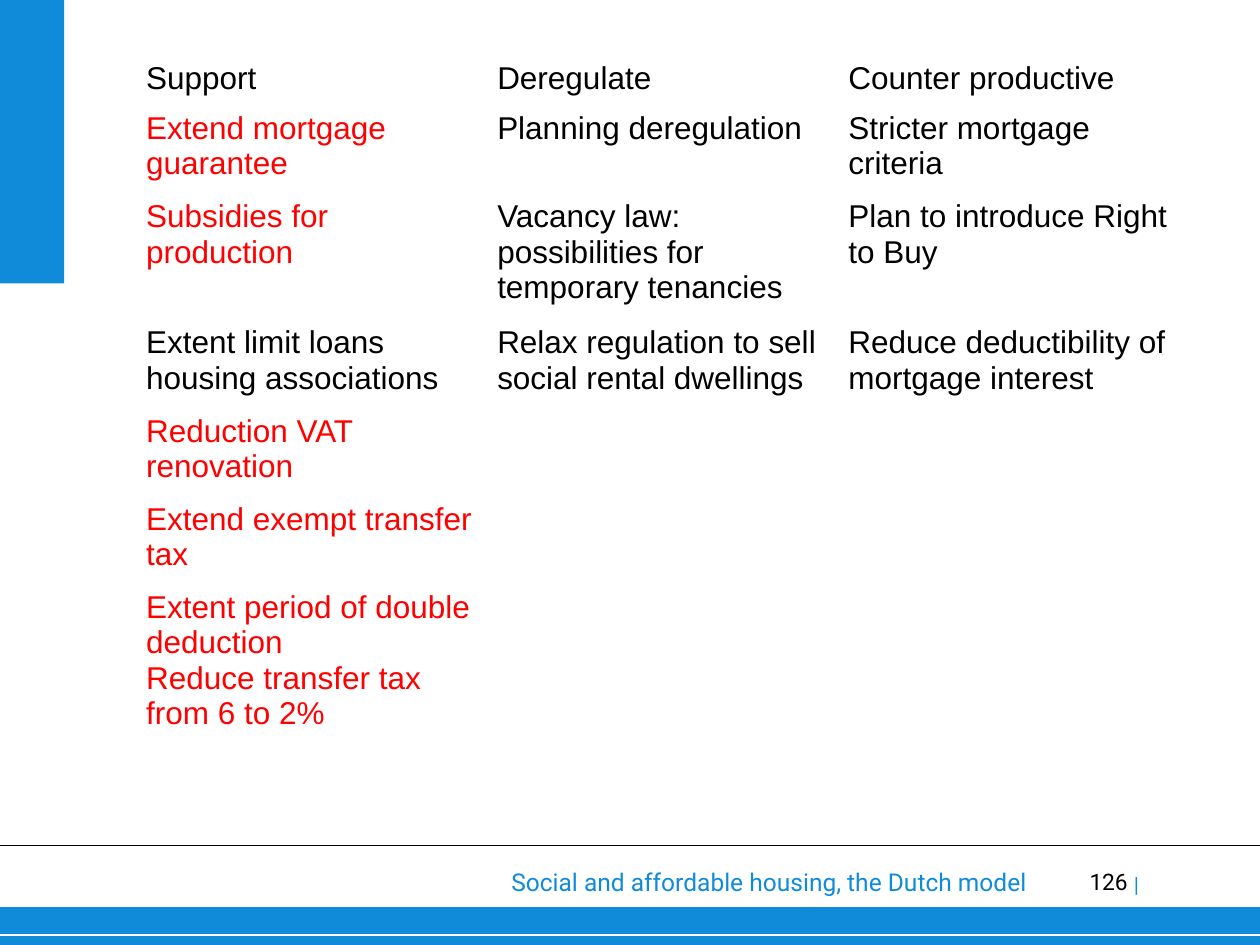
from dataclasses import dataclass

from lxml.etree import SubElement
from pptx import Presentation
from pptx.dml.color import RGBColor
from pptx.enum.shapes import MSO_CONNECTOR, MSO_SHAPE
from pptx.enum.text import PP_ALIGN
from pptx.oxml.ns import qn
from pptx.util import Inches, Pt


@dataclass(frozen=True)
class Theme:
    blue: RGBColor = RGBColor(0x10, 0x8B, 0xD9)
    black: RGBColor = RGBColor(0, 0, 0)
    red: RGBColor = RGBColor(0xFF, 0, 0)
    white: RGBColor = RGBColor(0xFF, 0xFF, 0xFF)
    table_font: str = "Arial"
    footer_font: str = "Roboto"
    table_size: int = 18
    footer_size: int = 14
    number_size: int = 13
    divider_size: int = 12


THEME = Theme()

HEADINGS = ["Support", "Deregulate", "Counter productive"]
# Row height, then the measures in each column
MEASURES = [
    (0.7, ["Extend mortgage guarantee", "Planning deregulation", "Stricter mortgage criteria"]),
    (1.0, ["Subsidies for production",
           "Vacancy law: possibilities for temporary tenancies",
           "Plan to introduce Right to Buy"]),
    (0.7, ["Extent limit loans housing associations",
           "Relax regulation to sell social rental dwellings",
           "Reduce deductibility of mortgage interest"]),
    (0.7, ["Reduction VAT renovation", "", ""]),
    (0.7, ["Extend exempt transfer tax", "", ""]),
    (1.6, ["Extent period of double deduction\nReduce transfer tax from 6 to 2%", "", ""]),
]
# Support measures that stay black
UNMARKED = {"Extent limit loans housing associations"}


def add_run(paragraph, text, font, size, color):
    run = paragraph.add_run()
    run.text = text
    run.font.name = font
    run.font.size = Pt(size)
    run.font.bold = False
    run.font.color.rgb = color


def add_band(slide, left, top, width, height):
    band = slide.shapes.add_shape(
        MSO_SHAPE.RECTANGLE, Inches(left), Inches(top), Inches(width), Inches(height))
    band.shadow.inherit = False
    band.fill.solid()
    band.fill.fore_color.rgb = THEME.blue
    band.line.fill.background()


def add_rule(slide, left, y, width, color, weight):
    rule = slide.shapes.add_connector(
        MSO_CONNECTOR.STRAIGHT, Inches(left), Inches(y), Inches(left + width), Inches(y))
    rule.line.color.rgb = color
    rule.line.width = Pt(weight)
    SubElement(rule.element.spPr, qn("a:effectLst"))


def add_label(slide, box, text, size, color, align, inset=(0, 0)):
    frame = slide.shapes.add_textbox(*map(Inches, box)).text_frame
    frame.word_wrap = True
    frame.margin_left = frame.margin_right = Inches(inset[0])
    frame.margin_top = frame.margin_bottom = Inches(inset[1])
    paragraph = frame.paragraphs[0]
    paragraph.alignment = align
    add_run(paragraph, text, THEME.footer_font, size, color)


def add_footer(slide, left, top, width, height):
    add_band(slide, left, top + height - 0.3, width, 0.3)
    add_rule(slide, left, top + height - 0.08, width, THEME.white, 0.75)
    add_rule(slide, left, top, width, THEME.black, 1)
    add_label(slide, (left + 3.42, top + 0.12, 4.83, 0.34),
              "Social and affordable housing, the Dutch model",
              THEME.footer_size, THEME.blue, PP_ALIGN.RIGHT, (0.1, 0.05))
    add_label(slide, (left + 8.36, top + 0.18, 0.59, 0.28), "126",
              THEME.number_size, THEME.black, PP_ALIGN.RIGHT)
    add_label(slide, (left + 9, top + 0.21, 1, 0.2), "|",
              THEME.divider_size, THEME.blue, PP_ALIGN.LEFT)


def set_borders(cell, bottom_weight):
    properties = cell._tc.get_or_add_tcPr()
    weights = {"a:lnL": 1, "a:lnR": 1, "a:lnT": 1, "a:lnB": bottom_weight}
    # Borders come before the cell's fill
    for position, (side, weight) in enumerate(weights.items()):
        border = SubElement(properties, qn(side), w=str(Pt(weight)))
        fill = SubElement(border, qn("a:solidFill"))
        SubElement(fill, qn("a:srgbClr"), val=str(THEME.white))
        properties.insert(position, border)


def fill_cell(cell, text, color, bottom_weight):
    cell.fill.solid()
    cell.fill.fore_color.rgb = THEME.white
    set_borders(cell, bottom_weight)
    frame = cell.text_frame
    for index, line in enumerate(text.split("\n") if text else []):
        paragraph = frame.add_paragraph() if index else frame.paragraphs[0]
        add_run(paragraph, line, THEME.table_font, THEME.table_size, color)


def add_measures_table(slide, left, top, width):
    rows = [(0.4, HEADINGS)] + MEASURES
    height = sum(row_height for row_height, _ in rows)
    table = slide.shapes.add_table(
        len(rows), len(HEADINGS),
        Inches(left), Inches(top), Inches(width), Inches(height)).table
    table.first_row = False
    table.horz_banding = False
    for row, (row_height, texts) in enumerate(rows):
        table.rows[row].height = Inches(row_height)
        for column, text in enumerate(texts):
            marked = row > 0 and column == 0 and text not in UNMARKED
            fill_cell(table.cell(row, column), text,
                      THEME.red if marked else THEME.black,
                      1 if row else 3)


def main():
    presentation = Presentation()
    presentation.slide_width = Inches(10)
    presentation.slide_height = Inches(7.5)
    slide = presentation.slides.add_slide(presentation.slide_layouts[6])

    # Footer and side band
    add_footer(slide, 0, 6.71, 10, 0.79)
    add_band(slide, 0, 0, 0.51, 2.25)
    # Policy measures by kind
    add_measures_table(slide, 1.06, 0.43, 8.36)

    presentation.save("out.pptx")


if __name__ == "__main__":
    main()
